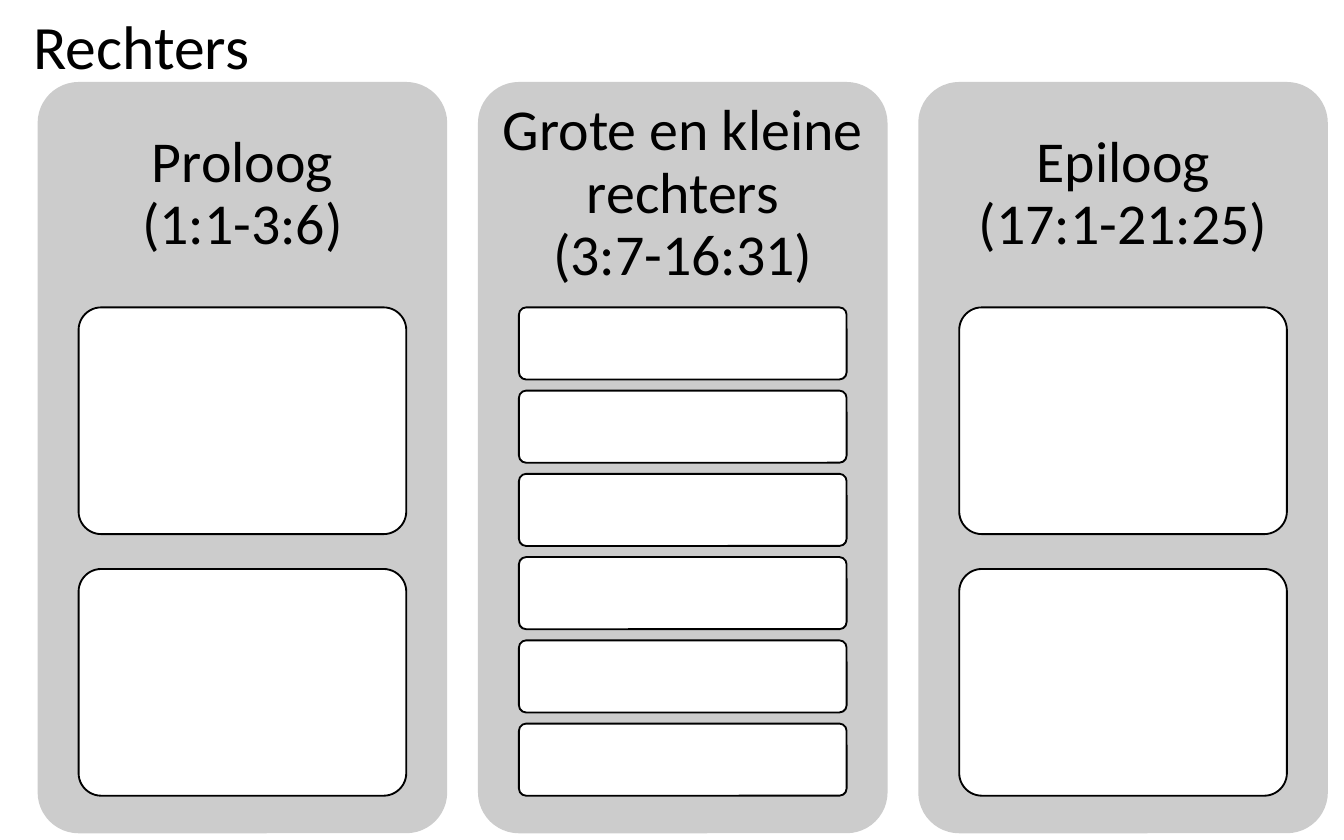
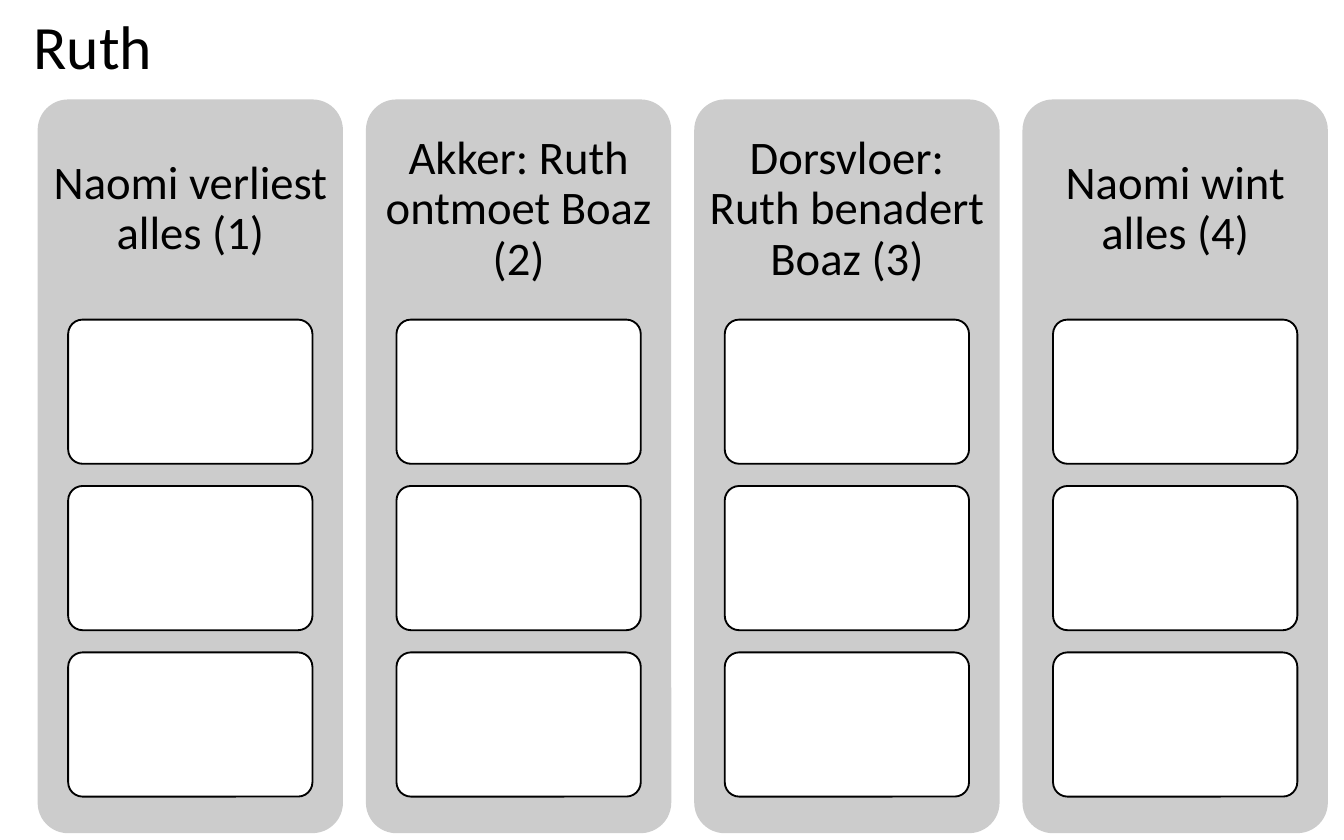
from pptx import Presentation
from pptx.dml.color import RGBColor
from pptx.enum.shapes import MSO_SHAPE
from pptx.enum.text import MSO_ANCHOR, PP_ALIGN
from pptx.util import Inches, Pt

ROUNDED = MSO_SHAPE.ROUNDED_RECTANGLE
MIDDLE = MSO_ANCHOR.MIDDLE
LEFT, CENTER = PP_ALIGN.LEFT, PP_ALIGN.CENTER

COLORS = {"panel": "CCCCCC", "box": "FFFFFF", "ink": "000000"}
FONT = "Calibri"
TITLE_SIZE = 33

AREA_LEFT, AREA_WIDTH, AREA_BOTTOM = 0.28, 9.6, 6.2
COLUMN_GAP = 0.075
HEADER_SHARE, BODY_SHARE = 0.3, 0.65
BOX_SHARE, BOX_GAP = 0.8, 0.154

BOOKS = [
    {
        "title": "Rechters", "top": 0.61, "size": 31, "inset": 0.13,
        "columns": [
            (["Proloog", "(1:1-3:6)"], 2),
            (["Grote en kleine rechters", "(3:7-16:31)"], 6),
            (["Epiloog", "(17:1-21:25)"], 2),
        ],
    },
    {
        "title": "Ruth", "top": 0.74, "size": 25, "inset": 0.1,
        "columns": [
            (["Naomi verliest alles (1)"], 3),
            (["Akker: Ruth ontmoet Boaz (2)"], 3),
            (["Dorsvloer: Ruth benadert Boaz (3)"], 3),
            (["Naomi wint alles (4)"], 3),
        ],
    },
]


def color(name):
    """Return the named palette colour."""
    return RGBColor.from_string(COLORS[name])


def add_rounded(shapes, left, top, width, height, fill, outlined=False):
    """Add a rounded rectangle, with a thin outline if asked."""
    shape = shapes.add_shape(ROUNDED, Inches(left), Inches(top), Inches(width), Inches(height))
    shape.adjustments[0] = 0.1
    shape.shadow.inherit = False
    shape.fill.solid()
    shape.fill.fore_color.rgb = color(fill)
    if outlined:
        shape.line.color.rgb = color("ink")
        shape.line.width = Pt(1)
    else:
        shape.line.fill.background()


def add_text(shapes, left, top, width, height, lines, size, align, insets):
    """Add a vertically centred text box holding one paragraph of lines."""
    text_box = shapes.add_textbox(Inches(left), Inches(top), Inches(width), Inches(height))
    frame = text_box.text_frame
    frame.word_wrap = True
    frame.vertical_anchor = MIDDLE
    horizontal, vertical = insets
    frame.margin_left = frame.margin_right = Inches(horizontal)
    frame.margin_top = frame.margin_bottom = Inches(vertical)
    paragraph = frame.paragraphs[0]
    paragraph.alignment = align
    paragraph.line_spacing = 0.9
    for index, line in enumerate(lines):
        if index:
            paragraph.add_line_break()
        run = paragraph.add_run()
        run.text = line
        run.font.name = FONT
        run.font.size = Pt(size)
        run.font.color.rgb = color("ink")


def add_boxes(shapes, left, top, width, height, count):
    """Stack equal boxes that fill the given height."""
    box_height = height / (count + (count - 1) * BOX_GAP)
    for index in range(count):
        box_top = top + index * box_height * (1 + BOX_GAP)
        add_rounded(shapes, left, box_top, width, box_height, "box", outlined=True)


def add_column(shapes, left, width, book, heading, box_count):
    """Add a panel with its heading and its stack of boxes."""
    top = book["top"]
    height = AREA_BOTTOM - top
    header_height = height * HEADER_SHARE
    inset = book["inset"]
    add_rounded(shapes, left, top, width, height, "panel")
    add_text(shapes, left, top, width, header_height, heading, book["size"], CENTER, (inset, inset))
    box_left = left + width * (1 - BOX_SHARE) / 2
    add_boxes(shapes, box_left, top + header_height, width * BOX_SHARE, height * BODY_SHARE, box_count)


def add_book_slide(presentation, book):
    """Add a slide with the book title and a column for each section."""
    slide = presentation.slides.add_slide(presentation.slide_layouts[6])
    diagram = slide.shapes.add_group_shape()
    count = len(book["columns"])
    width = AREA_WIDTH / (count + (count - 1) * COLUMN_GAP)
    for index, (heading, box_count) in enumerate(book["columns"]):
        left = AREA_LEFT + index * width * (1 + COLUMN_GAP)
        add_column(diagram.shapes, left, width, book, heading, box_count)
    add_text(slide.shapes, 0.15, 0, 8.62, 0.74, [book["title"]], TITLE_SIZE, LEFT, (0.1, 0.05))


def main():
    """Build and save the presentation."""
    presentation = Presentation()
    presentation.slide_width = Inches(10)
    presentation.slide_height = Inches(6.25)
    for book in BOOKS:
        add_book_slide(presentation, book)
    presentation.save("out.pptx")


if __name__ == "__main__":
    main()
